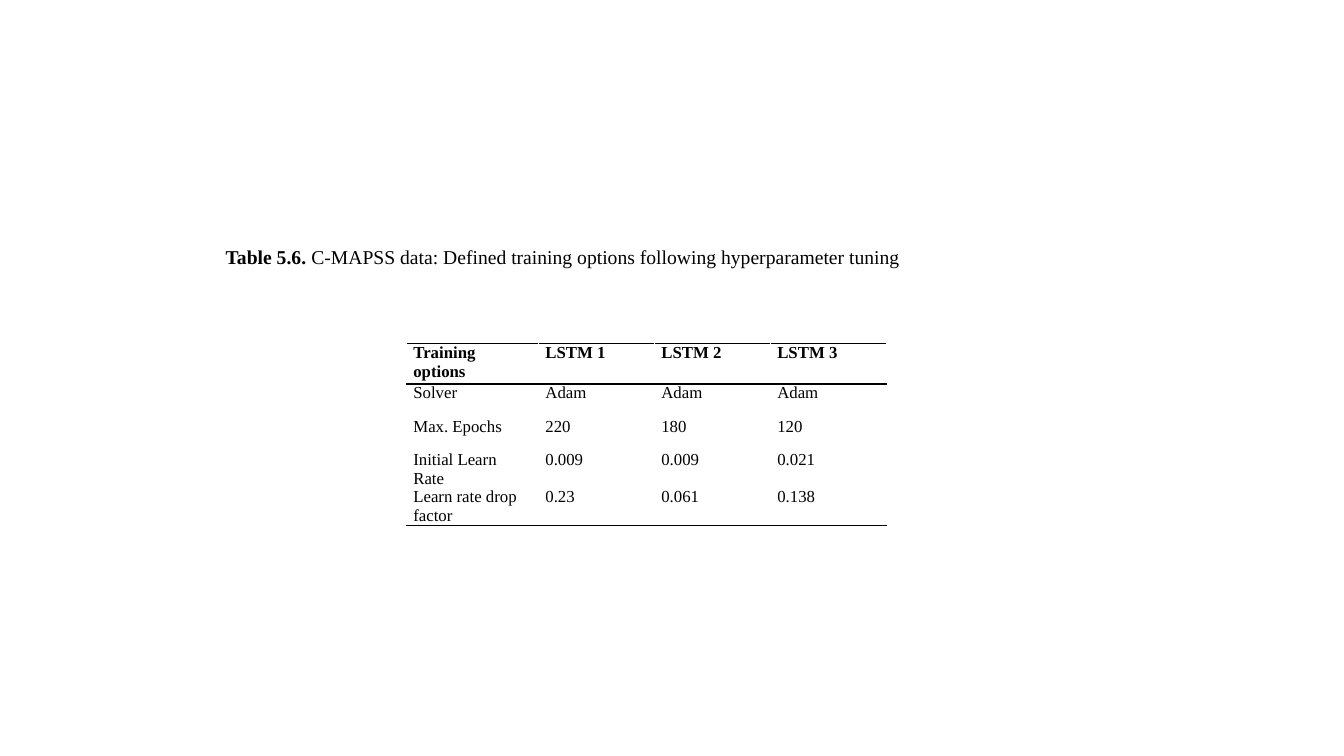
from dataclasses import dataclass

from lxml.etree import SubElement
from pptx import Presentation
from pptx.dml.color import RGBColor
from pptx.enum.text import MSO_ANCHOR as Anchor, MSO_AUTO_SIZE as AutoSize
from pptx.oxml.ns import qn
from pptx.util import Inches, Pt


@dataclass(frozen=True)
class Theme:
    font: str = "Times New Roman"
    ink: str = "000000"
    paper: str = "FFFFFF"
    caption_size: int = 14
    table_size: int = 12
    rule_width: int = 1


class SlideBuilder:
    def __init__(self, prs, theme):
        self.theme = theme
        self.slide = prs.slides.add_slide(prs.slide_layouts[6])

    def style_run(self, r, size, bold):
        r.font.name = self.theme.font
        r.font.size = Pt(size)
        r.font.bold = bold
        r.font.color.rgb = RGBColor.from_string(self.theme.ink)

    def caption(self, label, text, left, top, width, height):
        sp = self.slide.shapes.add_textbox(
            Inches(left), Inches(top), Inches(width), Inches(height))
        tf = sp.text_frame
        tf.word_wrap = False
        tf.auto_size = AutoSize.SHAPE_TO_FIT_TEXT
        tf.vertical_anchor = Anchor.MIDDLE
        for part, bold in ((label, True), (text, False)):
            r = tf.paragraphs[0].add_run()
            r.text = part
            self.style_run(r, self.theme.caption_size, bold)

    def borders(self, cell, ruled_sides):
        tc_pr = cell._tc.get_or_add_tcPr()
        for side in "LRTB":
            ln = SubElement(tc_pr, qn(f"a:ln{side}"), w=str(Pt(self.theme.rule_width)))
            color = self.theme.ink if side in ruled_sides else self.theme.paper
            SubElement(SubElement(ln, qn("a:solidFill")), qn("a:srgbClr"), val=color)

    def cell(self, cell, text, bold, ruled_sides):
        self.borders(cell, ruled_sides)
        cell.fill.background()
        cell.margin_left = cell.margin_right = Inches(0.07)
        cell.margin_top = cell.margin_bottom = 0
        p = cell.text_frame.paragraphs[0]
        p.text = text
        p.space_before = p.space_after = Pt(3)
        self.style_run(p.runs[0], self.theme.table_size, bold)

    def table(self, rows, left, top, col_widths, row_heights):
        table = self.slide.shapes.add_table(
            len(rows), len(col_widths), Inches(left), Inches(top),
            Inches(sum(col_widths)), Inches(sum(row_heights))).table
        table.first_row = table.horz_banding = False
        for column, width in zip(table.columns, col_widths):
            column.width = Inches(width)
        # Rules above and below the header, and under the last row
        ruled = {0: "TB", 1: "T", len(rows) - 1: "B"}
        for i, (values, height) in enumerate(zip(rows, row_heights)):
            table.rows[i].height = Inches(height)
            for j, value in enumerate(values):
                self.cell(table.cell(i, j), value, i == 0, ruled.get(i, ""))


TRAINING_OPTIONS = [
    ("Training options", "LSTM 1", "LSTM 2", "LSTM 3"),
    ("Solver", "Adam", "Adam", "Adam"),
    ("Max. Epochs", "220", "180", "120"),
    ("Initial Learn Rate", "0.009", "0.009", "0.021"),
    ("Learn rate drop factor", "0.23", "0.061", "0.138"),
]


def main():
    prs = Presentation()
    prs.slide_width, prs.slide_height = Inches(13.33), Inches(7.5)
    s = SlideBuilder(prs, Theme())

    # Training options table
    s.table(TRAINING_OPTIONS, 4.03, 3.41, [1.31] + [1.15] * 3, [0.4] + [0.33] * 4)

    # Table caption
    s.caption("Table 5.6. ",
              "C-MAPSS data: Defined training options following hyperparameter tuning",
              2.14, 2.38, 6.94, 0.34)

    prs.save("out.pptx")


if __name__ == "__main__":
    main()
